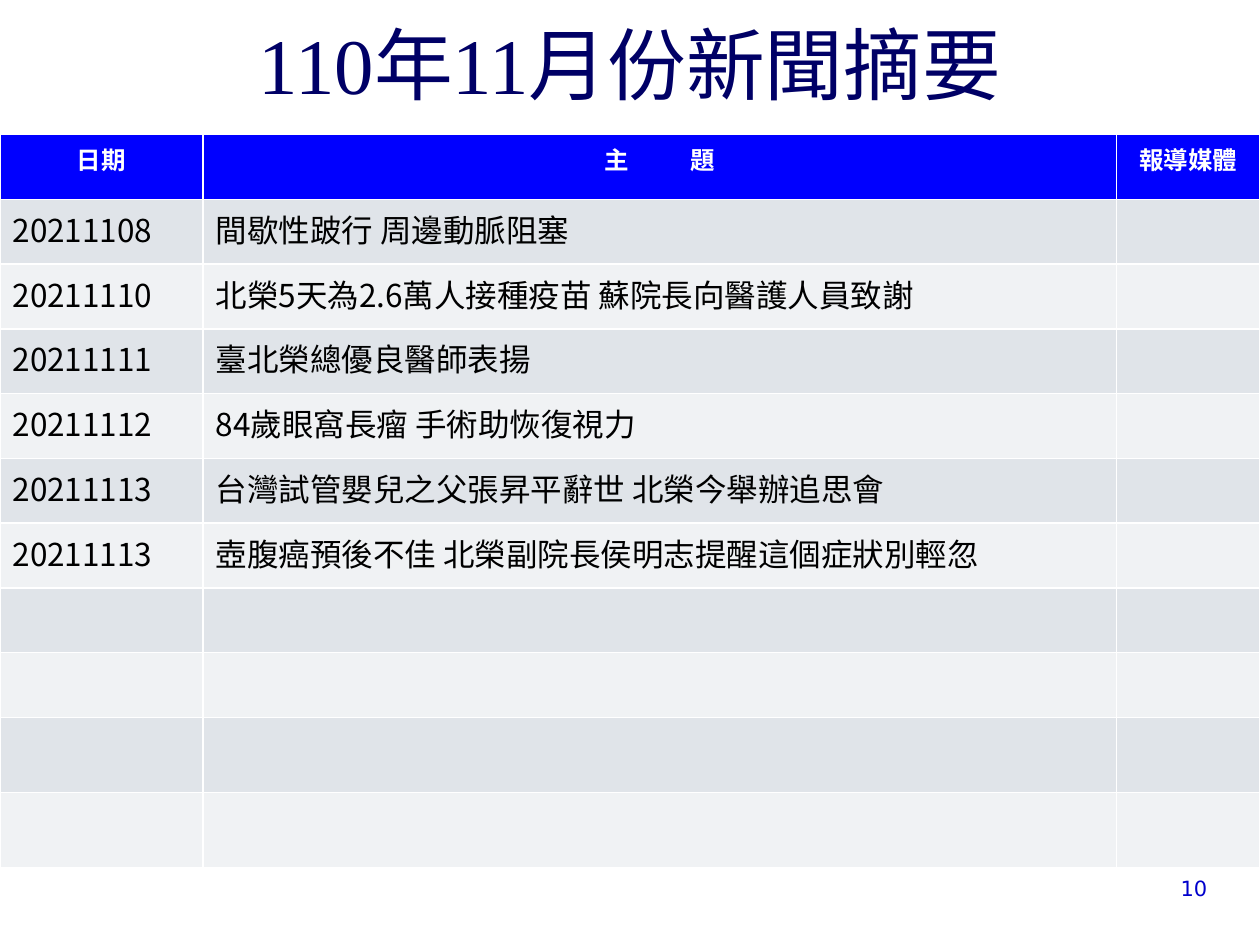
from dataclasses import dataclass
from lxml.etree import SubElement
from pptx import Presentation
from pptx.dml.color import RGBColor
from pptx.enum.text import MSO_ANCHOR, MSO_AUTO_SIZE, PP_ALIGN
from pptx.oxml.ns import qn
from pptx.util import Pt


@dataclass(frozen=True)
class Theme:
    navy: str = "000066"
    blue: str = "0000FF"
    page: str = "0000CC"
    white: str = "FFFFFF"
    black: str = "000000"
    bands: tuple = ("E0E4E9", "F0F2F4")
    serif: str = "Times New Roman"
    sans: str = "DejaVu Sans"
    han: str = "Noto Sans CJK SC"
    title: int = 45
    body: int = 18
    head: int = 14
    note: int = 12


THEME = Theme()
WIDTHS = (116, 522, 82)
HEIGHTS = (37,) * 9 + (43,) * 2
HEADS = ("日期", "主 題", "報導媒體")
NEWS = (
    ("20211108", "間歇性跛行 周邊動脈阻塞"),
    ("20211110", "北榮5天為2.6萬人接種疫苗 蘇院長向醫護人員致謝"),
    ("20211111", "臺北榮總優良醫師表揚"),
    ("20211112", "84歲眼窩長瘤 手術助恢復視力"),
    ("20211113", "台灣試管嬰兒之父張昇平辭世 北榮今舉辦追思會"),
    ("20211113", "壺腹癌預後不佳 北榮副院長侯明志提醒這個症狀別輕忽"),
)


def style(run, face, size, color, bold=False):
    font = run.font
    font.name, font.size, font.bold = face, Pt(size), bold
    font.color.rgb = RGBColor.from_string(color)
    SubElement(run._r.get_or_add_rPr(), qn("a:ea"), typeface=THEME.han)


def write(frame, text, align, *look):
    frame.text = text
    line = frame.paragraphs[0]
    line.alignment = align
    for run in line.runs:
        style(run, *look)


def paint(cell, color):
    cell.fill.solid()
    cell.fill.fore_color.rgb = RGBColor.from_string(color)


def spread(cell, gap):
    line = cell.text_frame.paragraphs[0]
    first = line.runs[0]
    last = line.add_run()
    last.text = first.text[-1]
    first.text = first.text[:-1]
    style(last, THEME.han, THEME.head, THEME.white, True)
    first._r.get_or_add_rPr().set("spc", str(gap * 100))


def add_title(slide, text):
    title = slide.shapes.title
    title.left, title.top, title.width, title.height = Pt(45), Pt(24.5), Pt(630), Pt(42)
    frame = title.text_frame
    frame.auto_size = MSO_AUTO_SIZE.NONE
    frame.vertical_anchor = MSO_ANCHOR.BOTTOM
    write(frame, text, PP_ALIGN.CENTER, THEME.serif, THEME.title, THEME.navy)


def add_news(slide):
    table = slide.shapes.add_table(
        len(HEIGHTS), len(WIDTHS), Pt(0), Pt(77), Pt(sum(WIDTHS)), Pt(sum(HEIGHTS))
    ).table
    for col, width in zip(table.columns, WIDTHS):
        col.width = Pt(width)
    for i, (row, height) in enumerate(zip(table.rows, HEIGHTS)):
        row.height = Pt(height)
        for cell in row.cells:
            paint(cell, THEME.bands[(i - 1) % 2] if i else THEME.blue)
    for cell, text in zip(table.rows[0].cells, HEADS):
        write(cell.text_frame, text, PP_ALIGN.CENTER,
              THEME.han, THEME.head, THEME.white, True)
    spread(table.cell(0, 1), 16)
    for i, item in enumerate(NEWS, 1):
        for cell, text in zip(table.rows[i].cells, item):
            write(cell.text_frame, text, PP_ALIGN.LEFT,
                  THEME.han, THEME.body, THEME.black)


def add_page(slide, text):
    frame = slide.shapes.add_textbox(Pt(643.5), Pt(497), Pt(53.5), Pt(21.5)).text_frame
    frame.word_wrap = True
    write(frame, text, PP_ALIGN.RIGHT, THEME.sans, THEME.note, THEME.page)


def main():
    deck = Presentation()
    deck.slide_width, deck.slide_height = Pt(720), Pt(540)
    slide = deck.slides.add_slide(deck.slide_layouts[5])
    add_title(slide, "110年11月份新聞摘要")
    add_news(slide)
    add_page(slide, "10")
    deck.save("out.pptx")


if __name__ == "__main__":
    main()
